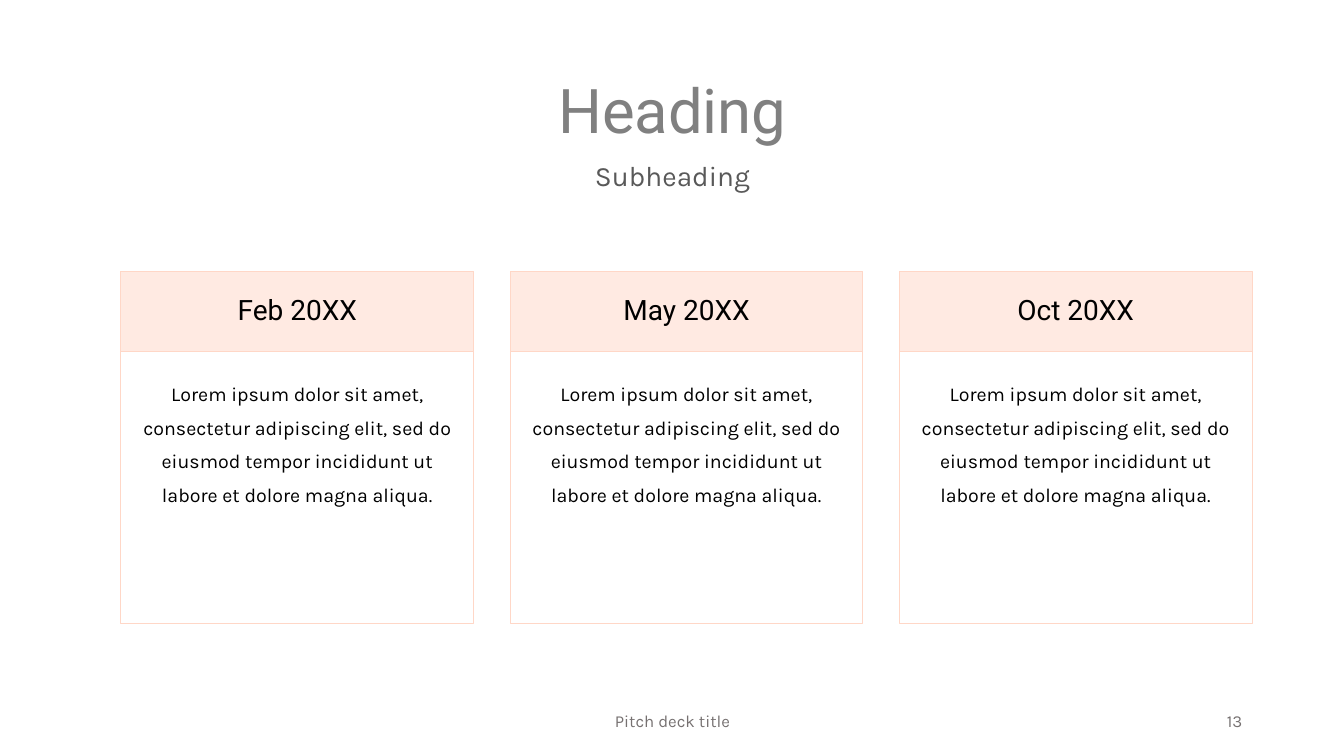
from dataclasses import dataclass

from lxml.etree import SubElement
from pptx import Presentation
from pptx.dml.color import RGBColor
from pptx.enum.shapes import MSO_SHAPE
from pptx.enum.text import MSO_ANCHOR, MSO_AUTO_SIZE, PP_ALIGN
from pptx.oxml.ns import qn
from pptx.util import Inches, Pt


@dataclass(frozen=True)
class Theme:
    heading_font: str = "Roboto"
    body_font: str = "Karla"
    heading_color: str = "808080"
    subheading_color: str = "595959"
    text_color: str = "000000"
    footer_color: str = "767171"
    peach: str = "FFD7C7"
    heading_size: int = 44
    label_size: int = 20
    body_size: int = 14
    footer_size: int = 12


theme = Theme()


def place(shape, left, top, width, height):
    shape.left, shape.top = Inches(left), Inches(top)
    shape.width, shape.height = Inches(width), Inches(height)


def write(shape, text, font, size, color, anchor=MSO_ANCHOR.TOP,
          align=PP_ALIGN.CENTER, line_spacing=None, space_before=0,
          margins=(0.1, 0.05, 0.1, 0.05)):
    frame = shape.text_frame
    frame.word_wrap = True
    frame.auto_size = MSO_AUTO_SIZE.NONE
    frame.vertical_anchor = anchor
    (frame.margin_left, frame.margin_top,
     frame.margin_right, frame.margin_bottom) = map(Inches, margins)
    paragraph = frame.paragraphs[0]
    paragraph.alignment = align
    paragraph.line_spacing = line_spacing
    paragraph.space_before = Pt(space_before)
    run = paragraph.add_run()
    run.text = text
    run.font.name = font
    run.font.size = Pt(size)
    run.font.color.rgb = RGBColor.from_string(color)
    return paragraph


presentation = Presentation()
presentation.slide_width = Inches(13.33)
presentation.slide_height = Inches(7.5)
slide = presentation.slides.add_slide(presentation.slide_layouts[1])

# Heading and subheading
left, content_width = 0.92, 11.5
title = slide.shapes.title
place(title, left, 0.4, content_width, 1.16)
write(title, "Heading", theme.heading_font, theme.heading_size,
      theme.heading_color, MSO_ANCHOR.BOTTOM, line_spacing=0.9,
      margins=(0.1, 0.05, 0.1, 0.1))

subheading = slide.placeholders[1]
place(subheading, left, 1.56, content_width, 0.5)
paragraph = write(subheading, "Subheading", theme.body_font, theme.label_size,
                  theme.subheading_color, line_spacing=0.9, space_before=10)
properties = paragraph._p.get_or_add_pPr()
properties.set("marL", "0")
properties.set("indent", "0")
SubElement(properties, qn("a:buNone"))

# Three milestone cards: a tinted date header above an outlined description
card_left, card_step, card_width = 1.2, 3.86, 3.5
card_top, header_height, description_height = 2.69, 0.8, 2.7
description_text = (
    "Lorem ipsum dolor sit amet, consectetur adipiscing elit, sed do "
    "eiusmod tempor incididunt ut labore et dolore magna aliqua."
)
for column, date in enumerate(("Feb 20XX", "May 20XX", "Oct 20XX")):
    header = slide.shapes.add_shape(MSO_SHAPE.RECTANGLE, 0, 0, 0, 0)
    description = slide.shapes.add_shape(MSO_SHAPE.RECTANGLE, 0, 0, 0, 0)
    x = card_left + column * card_step
    place(header, x, card_top, card_width, header_height)
    place(description, x, card_top + header_height, card_width, description_height)
    for shape in (header, description):
        shape.shadow.inherit = False
        shape.line.color.rgb = RGBColor.from_string(theme.peach)
        shape.line.width = Pt(0.75)

    header.fill.solid()
    header.fill.fore_color.rgb = RGBColor.from_string(theme.peach)
    fill_color = header._element.spPr.find(qn("a:solidFill")).find(qn("a:srgbClr"))
    SubElement(fill_color, qn("a:alpha"), val="50000")
    description.fill.background()

    write(header, date, theme.heading_font, theme.label_size, theme.text_color,
          MSO_ANCHOR.MIDDLE, line_spacing=0.9, space_before=10)
    write(description, description_text, theme.body_font, theme.body_size,
          theme.text_color, line_spacing=Pt(24), margins=(0.2, 0.2, 0.2, 0.05))

# Footer and slide number
for text, x, width, align in (
    ("Pitch deck title", 4.42, 4.5, PP_ALIGN.CENTER),
    ("13", 9.42, 3, PP_ALIGN.RIGHT),
):
    footer = slide.shapes.add_textbox(0, 0, 0, 0)
    place(footer, x, 6.95, width, 0.4)
    write(footer, text, theme.body_font, theme.footer_size, theme.footer_color,
          MSO_ANCHOR.MIDDLE, align)

presentation.save("out.pptx")
